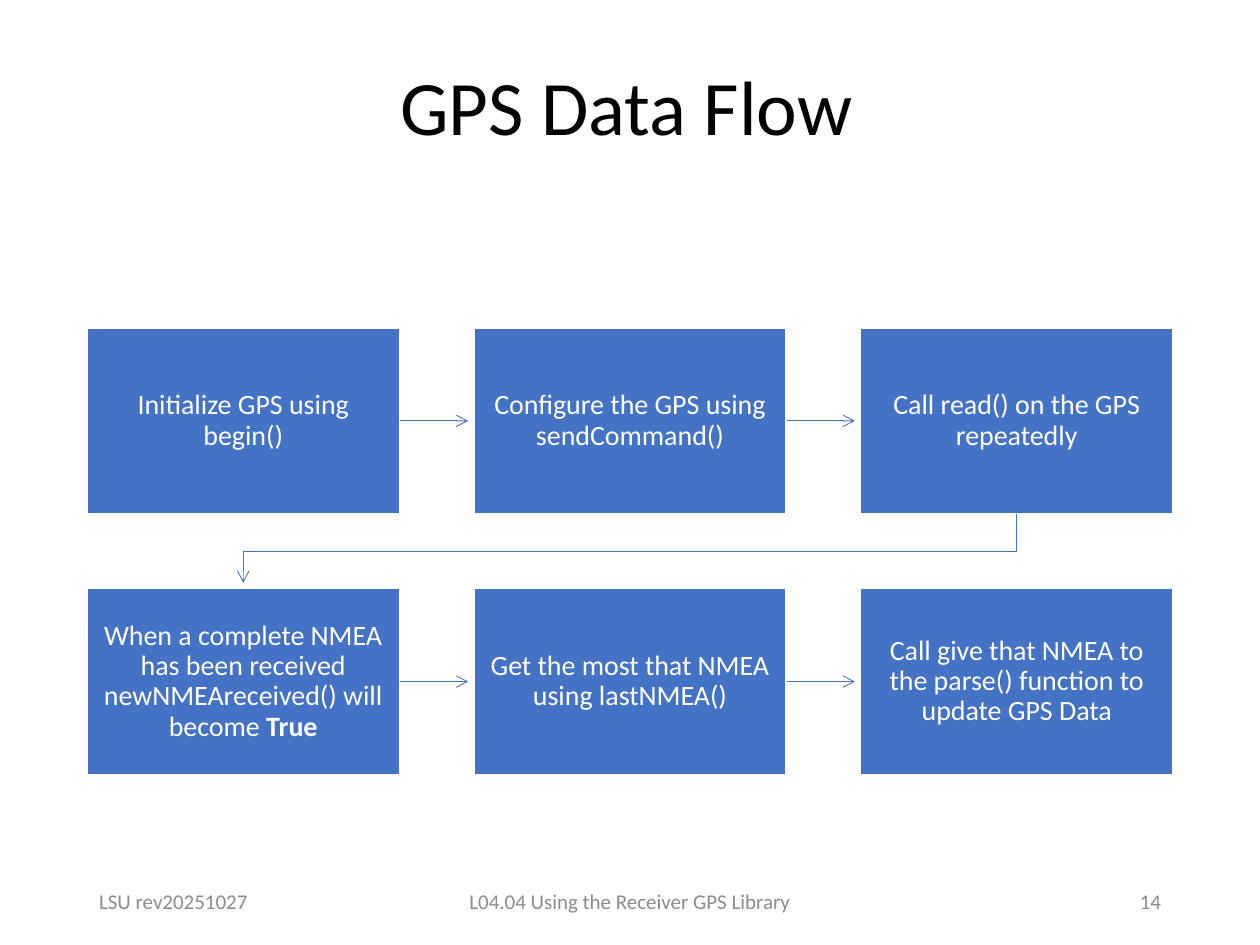
from lxml import etree
from pptx import Presentation
from pptx.dml.color import RGBColor
from pptx.enum import shapes, text
from pptx.oxml import ns
from pptx.util import Pt

BLACK = RGBColor(0x00, 0x00, 0x00)
WHITE = RGBColor(0xFF, 0xFF, 0xFF)
BLUE = RGBColor(0x44, 0x72, 0xC4)
GREY = RGBColor(0x8C, 0x8C, 0x8C)

FONT = "Calibri"
LEFT, CONTENT_WIDTH = 49.5, 621
COLUMNS = 3
ARROW_GAP = 3  # space between an arrowhead and the next step

# Each step is a list of (words, bold) spans
STEPS = [
    [("Initialize GPS using begin()", False)],
    [("Configure the GPS using sendCommand()", False)],
    [("Call read() on the GPS repeatedly", False)],
    [("When a complete NMEA has been received newNMEAreceived() will become ", False),
     ("True", True)],
    [("Get the most that NMEA using lastNMEA()", False)],
    [("Call give that NMEA to the parse() function to update GPS Data", False)],
]


def write(shape, spans, size, color, align, spacing=1.0):
    """Fill a shape with one vertically centred paragraph."""
    frame = shape.text_frame
    frame.word_wrap = True
    frame.vertical_anchor = text.MSO_ANCHOR.MIDDLE
    para = frame.paragraphs[0]
    para.alignment = align
    para.line_spacing = spacing
    para.font.name = FONT
    para.font.size = Pt(size)
    para.font.color.rgb = color
    for words, bold in spans:
        span = para.add_run()
        span.text = words
        if bold:
            span.font.bold = True


def add_label(page, left, top, width, height, words, size, color, align, spacing=1.0):
    box = page.shapes.add_textbox(Pt(left), Pt(top), Pt(width), Pt(height))
    write(box, [(words, False)], size, color, align, spacing)


def style_arrow(arrow):
    """Thin blue line with an open arrowhead at its end."""
    arrow.line.color.rgb = BLUE
    arrow.line.width = Pt(0.5)
    line = arrow.line._get_or_add_ln()
    etree.SubElement(line, ns.qn("a:tailEnd"), type="arrow")


def add_step(page, left, top, width, height, spans):
    box = page.shapes.add_shape(shapes.MSO_SHAPE.RECTANGLE,
                                Pt(left), Pt(top), Pt(width), Pt(height))
    box.shadow.inherit = False
    box.fill.solid()
    box.fill.fore_color.rgb = BLUE
    box.line.color.rgb = WHITE
    box.line.width = Pt(1.5)
    frame = box.text_frame
    frame.margin_left = frame.margin_right = Pt(8.8)
    frame.margin_top = frame.margin_bottom = Pt(9.2)
    write(box, spans, 16, WHITE, text.PP_ALIGN.CENTER, 0.9)
    return box


def add_side_arrow(page, start, end_x):
    """Arrow from the right side of a step towards its neighbour."""
    middle = start.top + start.height // 2
    arrow = page.shapes.add_connector(shapes.MSO_CONNECTOR.STRAIGHT,
                                      start.left + start.width, middle, end_x, middle)
    arrow.begin_connect(start, 3)
    style_arrow(arrow)
    etree.SubElement(arrow._element.spPr, ns.qn("a:effectLst"))


def add_return_arrow(page, start, target):
    """Bent arrow from the end of one row to the start of the next."""
    start_x = start.left + start.width // 2
    start_y = start.top + start.height
    end_x = target.left + target.width // 2
    bend_y = (start_y + target.top) // 2
    builder = page.shapes.build_freeform(start_x, start_y)
    builder.add_line_segments([(start_x, bend_y), (end_x, bend_y),
                               (end_x, target.top - Pt(ARROW_GAP))], close=False)
    arrow = builder.convert_to_shape()
    arrow.fill.background()
    arrow.shadow.inherit = False
    style_arrow(arrow)


def add_flow(page, left, top, width, height):
    step_width, step_height = 179, 107
    column_step = (width - step_width) / (COLUMNS - 1)
    row_step = height - step_height
    boxes = []
    for index, spans in enumerate(STEPS):
        row, column = divmod(index, COLUMNS)
        boxes.append(add_step(page, left + column * column_step, top + row * row_step,
                              step_width, step_height, spans))
    for start, target in zip(boxes, boxes[1:]):
        if start.top == target.top:
            add_side_arrow(page, start, target.left - Pt(ARROW_GAP))
        else:
            add_return_arrow(page, start, target)


def add_footer(page, left, top, width, height):
    side, middle = 162, 243
    parts = [
        (0, side, "LSU rev20251027", text.PP_ALIGN.LEFT),
        ((width - middle) / 2, middle, "L04.04 Using the Receiver GPS Library",
         text.PP_ALIGN.CENTER),
        (width - side, side, "14", text.PP_ALIGN.RIGHT),
    ]
    for offset, part_width, words, align in parts:
        add_label(page, left + offset, top, part_width, height, words, 12, GREY, align)


def main():
    deck = Presentation()
    deck.slide_width, deck.slide_height = Pt(720), Pt(540)
    page = deck.slides.add_slide(deck.slide_layouts[6])

    # Title
    add_label(page, 126.5, 11, 463, 104, "GPS Data Flow", 44, BLACK,
              text.PP_ALIGN.CENTER, 0.9)
    # Two rows of steps
    add_flow(page, LEFT, 187, CONTENT_WIDTH, 256)
    # Footer
    add_footer(page, LEFT, 500.5, CONTENT_WIDTH, 28.8)

    deck.save("out.pptx")


if __name__ == "__main__":
    main()
